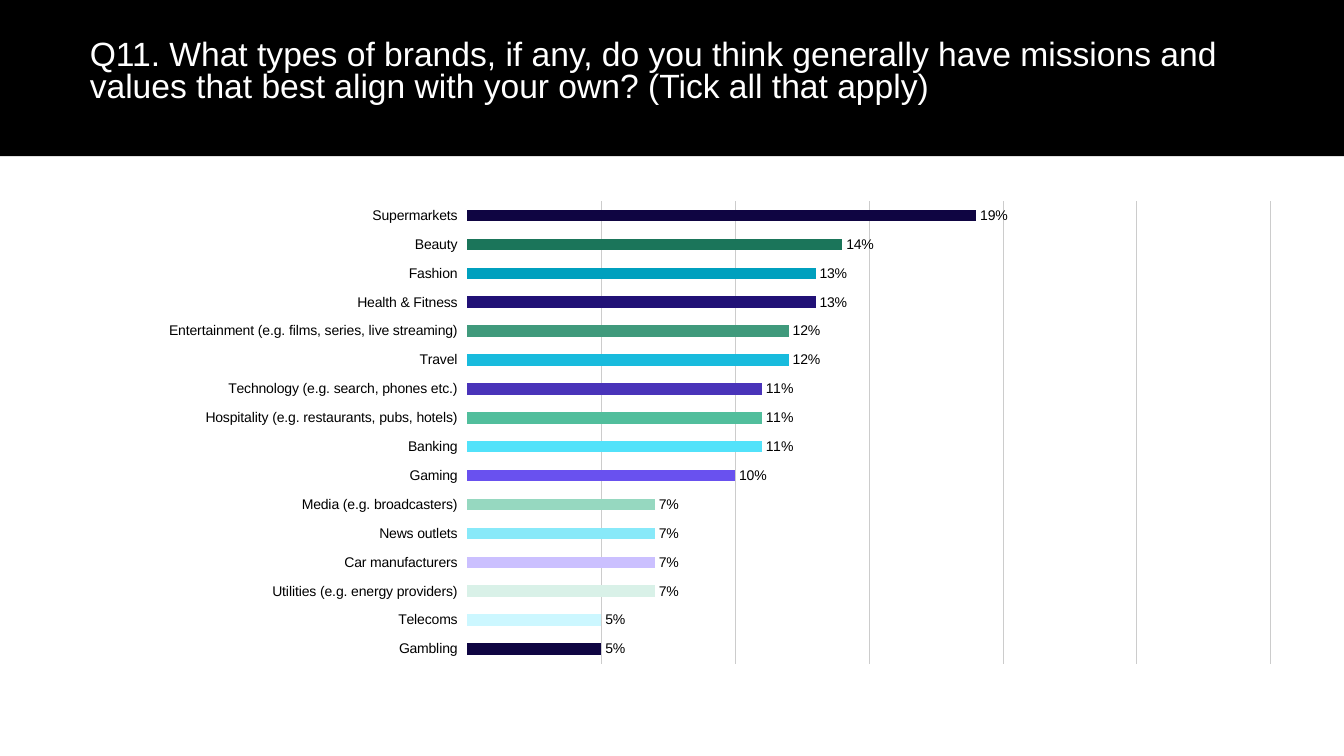
from dataclasses import dataclass

from lxml import etree
from pptx import Presentation
from pptx.chart.data import CategoryChartData
from pptx.dml.color import RGBColor
from pptx.enum.chart import XL_CHART_TYPE, XL_LABEL_POSITION, XL_TICK_LABEL_POSITION, XL_TICK_MARK
from pptx.enum.shapes import MSO_SHAPE
from pptx.enum.text import MSO_ANCHOR, MSO_AUTO_SIZE, PP_ALIGN
from pptx.oxml.ns import qn
from pptx.util import Inches, Pt

BAR_CLUSTERED = XL_CHART_TYPE.BAR_CLUSTERED
OUTSIDE_END = XL_LABEL_POSITION.OUTSIDE_END
LABELS_LOW = XL_TICK_LABEL_POSITION.LOW
NO_TICK = XL_TICK_MARK.NONE
RECTANGLE = MSO_SHAPE.RECTANGLE
TOP = MSO_ANCHOR.TOP
NO_AUTOFIT = MSO_AUTO_SIZE.NONE
LEFT = PP_ALIGN.LEFT


@dataclass(frozen=True)
class Theme:
    font: str = "Arial"
    chart_font: str = "Calibri"
    title_size: int = 24
    chart_size: int = 12
    label_size: int = 10
    band: str = "000000"
    title: str = "FFFFFF"
    text: str = "000000"
    axis: str = "FFFFFF"
    grid: str = "CCCCCC"
    bars: tuple = (
        "0F0542", "1B755A", "00A0BE", "211176", "409A7C",
        "18BBDD", "4933B9", "51BE9C", "52E2FA", "6951EF",
        "96D8C0", "88E9F9", "CBC0FF", "D9F1E8", "CCF7FF",
    )


TITLE = (
    "Q11. What types of brands, if any, do you think generally have missions and "
    "values that best align with your own? (Tick all that apply)"
)

BRAND_TYPES = {
    "Supermarkets": 0.19,
    "Beauty": 0.14,
    "Fashion": 0.13,
    "Health & Fitness": 0.13,
    "Entertainment (e.g. films, series, live streaming)": 0.12,
    "Travel": 0.12,
    "Technology (e.g. search, phones etc.)": 0.11,
    "Hospitality (e.g. restaurants, pubs, hotels)": 0.11,
    "Banking": 0.11,
    "Gaming": 0.1,
    "Media (e.g. broadcasters)": 0.07,
    "News outlets": 0.07,
    "Car manufacturers": 0.07,
    "Utilities (e.g. energy providers)": 0.07,
    "Telecoms": 0.05,
    "Gambling": 0.05,
}


def apply(target, values):
    for name, value in values.items():
        setattr(target, name, value)


class SurveyPage:
    def __init__(self, page, theme):
        self.page = page
        self.theme = theme

    def style_font(self, font, size, color, name=None):
        apply(font, {"name": name or self.theme.font, "size": Pt(size), "bold": False})
        font.color.rgb = RGBColor.from_string(color)

    def style_line(self, line, color):
        line.width = Pt(0.75)
        line.color.rgb = RGBColor.from_string(color)

    def band(self, left, top, width, height):
        band = self.page.shapes.add_shape(
            RECTANGLE, Inches(left), Inches(top), Inches(width), Inches(height))
        band.shadow.inherit = False
        band.fill.solid()
        band.fill.fore_color.rgb = RGBColor.from_string(self.theme.band)
        band.line.fill.background()

    def title(self, text, left, top, width, height):
        title = self.page.shapes.title
        apply(title, {"left": Inches(left), "top": Inches(top),
                      "width": Inches(width), "height": Inches(height)})
        apply(title.text_frame, {"text": text, "word_wrap": True,
                                 "auto_size": NO_AUTOFIT, "vertical_anchor": TOP})
        para = title.text_frame.paragraphs[0]
        apply(para, {"alignment": LEFT, "line_spacing": 0.8, "space_before": Pt(0)})
        self.style_font(para.runs[0].font, self.theme.title_size, self.theme.title)
        self.page.shapes._spTree.append(title._element)

    def bar_chart(self, shares, left, top, width, height):
        data = CategoryChartData(number_format="0%")
        data.categories = list(shares)
        data.add_series("Series 1", list(shares.values()))
        chart = self.page.shapes.add_chart(
            BAR_CLUSTERED, Inches(left), Inches(top), Inches(width), Inches(height), data).chart
        apply(chart, {"has_legend": False, "has_title": False})
        self.style_font(chart.font, self.theme.chart_size, self.theme.text, self.theme.chart_font)
        self.axes(chart)
        self.bars(chart.plots[0])
        self.plot_area(chart, {"x": 0.3, "y": 0.02, "w": 0.68, "h": 0.96})

    def axes(self, chart):
        categories = chart.category_axis
        apply(categories, {"reverse_order": True, "major_tick_mark": NO_TICK,
                           "minor_tick_mark": NO_TICK, "tick_label_position": LABELS_LOW,
                           "has_major_gridlines": False})
        self.style_line(categories.format.line, self.theme.axis)
        self.style_font(categories.tick_labels.font, self.theme.label_size, self.theme.text)

        values = chart.value_axis
        apply(values, {"minimum_scale": 0, "maximum_scale": 0.3, "major_unit": 0.05,
                       "has_major_gridlines": True, "visible": False})
        self.style_line(values.major_gridlines.format.line, self.theme.grid)

    def bars(self, plot):
        apply(plot, {"gap_width": 150, "vary_by_categories": False, "has_data_labels": True})
        labels = plot.data_labels
        apply(labels, {"show_value": True, "number_format": "0%",
                       "number_format_is_linked": False, "position": OUTSIDE_END})
        self.style_font(labels.font, self.theme.label_size, self.theme.text)
        series = plot.series[0]
        colors = self.theme.bars
        for index in range(len(series.values)):
            fill = series.points[index].format.fill
            fill.solid()
            fill.fore_color.rgb = RGBColor.from_string(colors[index % len(colors)])

    def plot_area(self, chart, fractions):
        area = chart._chartSpace.find(".//" + qn("c:plotArea"))
        for old in area.findall(qn("c:layout")):
            area.remove(old)
        layout = etree.Element(qn("c:layout"))
        manual = etree.SubElement(layout, qn("c:manualLayout"))
        settings = {"layoutTarget": "inner", "xMode": "edge", "yMode": "edge", **fractions}
        for name, value in settings.items():
            etree.SubElement(manual, qn("c:" + name)).set("val", str(value))
        area.insert(0, layout)


def main():
    deck = Presentation()
    apply(deck, {"slide_width": Inches(13.33), "slide_height": Inches(7.5)})
    title_only = deck.slide_layouts[5]
    survey = SurveyPage(deck.slides.add_slide(title_only), Theme())
    survey.band(0, 0, 13.33, 1.55)
    survey.bar_chart(BRAND_TYPES, 1.12, 1.9, 11.72, 4.78)
    survey.title(TITLE, 0.79, 0.35, 11.48, 0.8)
    deck.save("out.pptx")


if __name__ == "__main__":
    main()
